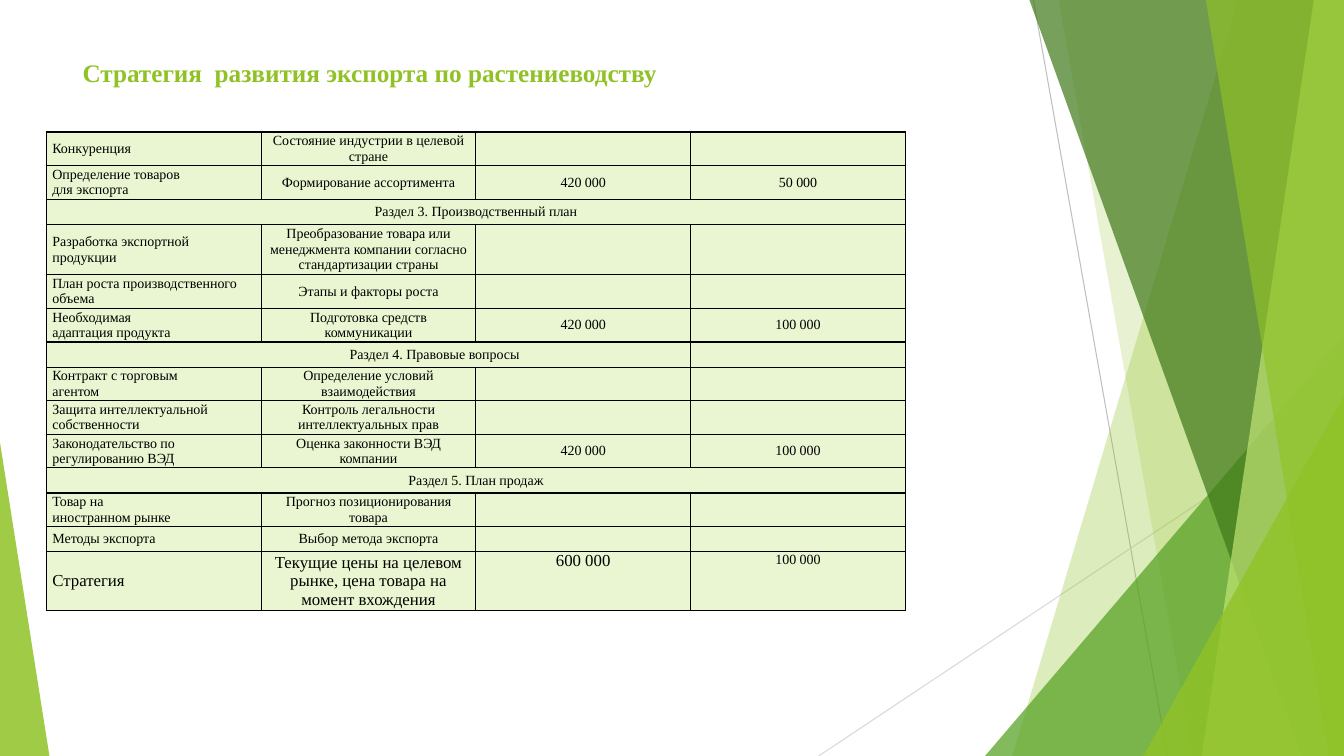
from dataclasses import dataclass

from lxml import etree
from pptx import Presentation
from pptx.dml.color import RGBColor
from pptx.enum.shapes import MSO_CONNECTOR, MSO_SHAPE
from pptx.enum.text import MSO_ANCHOR, PP_ALIGN
from pptx.oxml.ns import qn
from pptx.util import Inches, Pt

LINE = MSO_CONNECTOR.STRAIGHT
TRIANGLE = MSO_SHAPE.ISOSCELES_TRIANGLE
LEFT, CENTER = PP_ALIGN.LEFT, PP_ALIGN.CENTER
TOP, MIDDLE = MSO_ANCHOR.TOP, MSO_ANCHOR.MIDDLE

WIDTH, HEIGHT = 13.33, 7.5


@dataclass(frozen=True)
class Theme:
    font: str = "Times New Roman"
    lime: str = "90C226"
    green: str = "54A021"
    forest: str = "3F7819"
    pale: str = "C0E474"
    cell: str = "EAF6D1"
    text: str = "000000"
    gray: str = "BFBFBF"
    light_gray: str = "D9D9D9"
    title_size: int = 18
    body_size: int = 10
    large_size: int = 12


THEME = Theme()


class SlideBuilder:
    def __init__(self, s, theme):
        self.s = s
        self.theme = theme

    def line(self, start, end, color):
        sp = self.s.shapes.add_connector(LINE, *map(Inches, start + end))
        sp.line.color.rgb = RGBColor.from_string(color)
        sp.line.width = Pt(0.75)
        etree.SubElement(sp._element.spPr, qn("a:effectLst"))

    def paint(self, sp, color, opacity):
        sp.shadow.inherit = False
        sp.line.fill.background()
        sp.fill.solid()
        sp.fill.fore_color.rgb = RGBColor.from_string(color)
        clr = sp._element.spPr.find(qn("a:solidFill"))[0]
        etree.SubElement(clr, qn("a:alpha"), val=str(opacity * 1000))

    def facet(self, top_x, bottom_x, color, opacity):
        """Panel with a slanted left edge that reaches the right slide edge."""
        outline = [(WIDTH, 0), (WIDTH, HEIGHT), (bottom_x, HEIGHT)]
        builder = self.s.shapes.build_freeform(Inches(top_x), 0)
        builder.add_line_segments([(Inches(x), Inches(y)) for x, y in outline])
        self.paint(builder.convert_to_shape(), color, opacity)

    def triangle(self, left, top, width, apex, color, opacity):
        """Triangle that stands on the bottom slide edge."""
        box = map(Inches, (left, top, width, HEIGHT - top))
        sp = self.s.shapes.add_shape(TRIANGLE, *box)
        sp.adjustments[0] = apex
        self.paint(sp, color, opacity)

    def run(self, p, text, size, color, bold=False):
        r = p.add_run()
        r.text = text
        r.font.name = self.theme.font
        r.font.size = Pt(size)
        r.font.bold = bold
        r.font.color.rgb = RGBColor.from_string(color)

    def title(self, text, left, top, width, height):
        sp = self.s.shapes.add_textbox(*map(Inches, (left, top, width, height)))
        tf = sp.text_frame
        tf.word_wrap = True
        tf.vertical_anchor = MIDDLE
        self.run(tf.paragraphs[0], text, self.theme.title_size, self.theme.lime, True)

    def cell(self, cell, text, size, align, anchor=MIDDLE, indent=0):
        cell.margin_left = cell.margin_right = Inches(0.06)
        cell.margin_top = cell.margin_bottom = 0
        cell.vertical_anchor = anchor
        tf = cell.text_frame
        for i, part in enumerate(text.split("\n")):
            p = tf.add_paragraph() if i else tf.paragraphs[0]
            p.alignment = align
            if indent:
                p._p.get_or_add_pPr().set("marL", str(Inches(indent)))
            if part:
                self.run(p, part, size, self.theme.text)
            etree.SubElement(p._p, qn("a:endParaRPr"), sz=str(size * 100))
        # Borders come before the fill in the cell properties
        tc_pr = cell._tc.get_or_add_tcPr()
        for side in ("a:lnL", "a:lnR", "a:lnT", "a:lnB"):
            ln = etree.SubElement(tc_pr, qn(side), w=str(Pt(1)))
            fill = etree.SubElement(ln, qn("a:solidFill"))
            etree.SubElement(fill, qn("a:srgbClr"), val=self.theme.text)
        cell.fill.solid()
        cell.fill.fore_color.rgb = RGBColor.from_string(self.theme.cell)

    def plan_table(self, left, top, col_width, rows):
        cols = 4
        height = sum(row[0] for row in rows)
        box = map(Inches, (left, top, col_width * cols, height))
        table = self.s.shapes.add_table(len(rows), cols, *box).table
        table.first_row = table.horz_banding = False
        for col in table.columns:
            col.width = Inches(col_width)
        last = len(rows) - 1
        for i, (row_height, span, *texts) in enumerate(rows):
            table.rows[i].height = Inches(row_height)
            if span > 1:
                table.cell(i, 0).merge(table.cell(i, span - 1))
            texts += [""] * (cols - len(texts))
            for j, text in enumerate(texts):
                large = i == last and j < 3
                size = self.theme.large_size if large else self.theme.body_size
                align = LEFT if j == 0 and span == 1 else CENTER
                anchor = TOP if i == last and j > 1 else MIDDLE
                indent = 1.31 if span == 3 and j == 0 else 0
                self.cell(table.cell(i, j), text, size, align, anchor, indent)


# Row heights by number of text lines
ONE, TWO, THREE, TALL = 0.25, 1 / 3, 0.5, 0.58

# Height, columns spanned by the first cell, texts
PLAN = [
    (TWO, 1, "Конкуренция", "Состояние индустрии в целевой стране"),
    (TWO, 1, "Определение товаров\nдля экспорта", "Формирование ассортимента",
     "420 000", "50 000"),
    (ONE, 4, "Раздел 3. Производственный план"),
    (THREE, 1, "Разработка экспортной\nпродукции",
     "Преобразование товара или менеджмента компании согласно стандартизации страны"),
    (TWO, 1, "План роста производственного\nобъема", "Этапы и факторы роста"),
    (TWO, 1, "Необходимая\nадаптация продукта", "Подготовка средств коммуникации",
     "420 000", "100 000"),
    (ONE, 3, "Раздел 4. Правовые вопросы"),
    (TWO, 1, "Контракт с торговым\nагентом", "Определение условий взаимодействия"),
    (TWO, 1, "Защита интеллектуальной\nсобственности",
     "Контроль легальности интеллектуальных прав"),
    (TWO, 1, "Законодательство по\nрегулированию ВЭД",
     "Оценка законности ВЭД компании", "420 000", "100 000"),
    (ONE, 4, "Раздел 5. План продаж"),
    (TWO, 1, "Товар на\nиностранном рынке", "Прогноз позиционирования товара"),
    (ONE, 1, "Методы экспорта", "Выбор метода экспорта"),
    (TALL, 1, "Стратегия",
     "Текущие цены на целевом рынке, цена товара на момент вхождения",
     "600 000", "100 000"),
]


def main():
    prs = Presentation()
    prs.slide_width, prs.slide_height = Inches(WIDTH), Inches(HEIGHT)
    s = SlideBuilder(prs.slides.add_slide(prs.slide_layouts[6]), THEME)

    # Background lines and facets, back to front
    s.line((10.25, 0), (11.58, HEIGHT), THEME.gray)
    s.line((WIDTH, 4.03), (8.12, HEIGHT), THEME.light_gray)
    s.facet(12.28, 10.04, THEME.lime, 30)
    s.facet(10.5, 11.83, THEME.lime, 20)
    s.triangle(9.77, 3.33, 3.56, 1, THEME.green, 72)
    s.facet(10.21, 12.91, THEME.forest, 70)
    s.facet(13.03, 11.92, THEME.pale, 70)
    s.facet(11.96, 13.18, THEME.lime, 65)
    s.triangle(11.34, 3.93, 1.99, 1, THEME.lime, 80)
    s.triangle(0, 4.39, 0.49, 0, THEME.lime, 85)

    # Export plan and title
    s.plan_table(0.46, 1.31, 2.13, PLAN)
    s.title("Стратегия  развития экспорта по растениеводству", 0.72, 0.49, 8.05, 0.45)

    prs.save("out.pptx")


if __name__ == "__main__":
    main()
